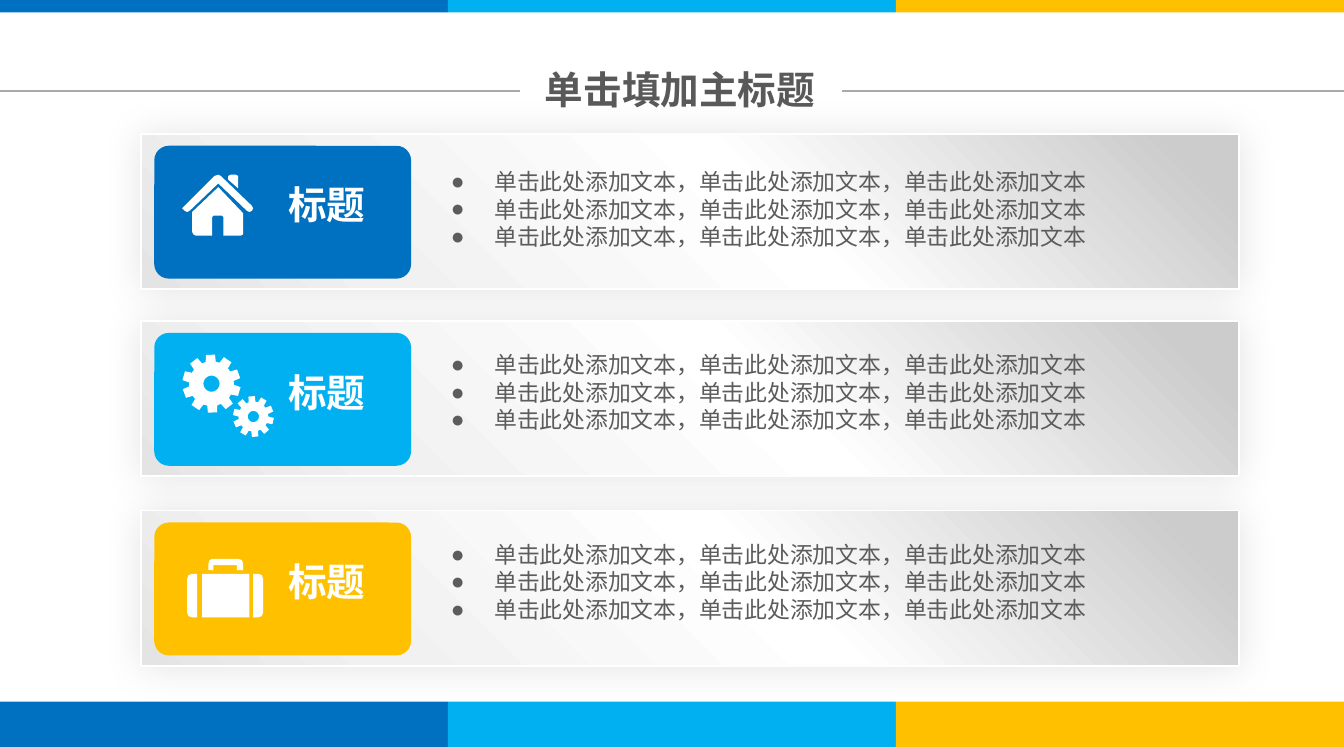
from math import cos, radians, sin

from lxml.etree import SubElement
from pptx import Presentation
from pptx.dml.color import RGBColor
from pptx.enum.shapes import MSO_CONNECTOR, MSO_SHAPE
from pptx.enum.text import MSO_AUTO_SIZE, PP_ALIGN
from pptx.oxml.ns import qn
from pptx.util import Cm, Pt

BLUE, SKY, AMBER, WHITE = "0070C0", "00B0F0", "FFC000", "FFFFFF"
TITLE_GRAY, TEXT_GRAY, LINE_GRAY = "5A5959", "5C5C5C", "A9A9A9"
PANEL_STOPS = [(6, "CCCCCC"), (43, "FFFFFF"), (80, "F1F1F1"), (100, "E4E4E4")]
CJK_FONT = "Noto Sans CJK SC"
LINE_TEXT = "，".join(["单击此处添加文本"] * 3)
ICON_UNIT = Cm(0.025)

HOUSE = [
    [(45, 1), (43, 0), (39, 0), (37, 1), (37, 4), (45, 11)],
    [(56, 25), (31, 1), (29, 0), (26, 1), (2, 25), (0, 27), (2, 29), (4, 30),
     (6, 29), (29, 7), (52, 29), (54, 30), (56, 29), (57, 27)],
    [(8, 30), (8, 46), (9, 48), (11, 49), (24, 49), (24, 34), (25, 33),
     (32, 33), (33, 34), (33, 49), (47, 49), (49, 48), (49, 31), (29, 10)],
]
CASE_SIDE = [(0, 16), (0, 43), (1, 46), (4, 47), (8, 47), (8, 12), (4, 12), (1, 13)]
CASE = [
    [(21, 5), (40, 5), (40, 9), (45, 9), (45, 4), (44, 1), (41, 0), (20, 0),
     (18, 1), (17, 4), (17, 9), (21, 9)],
    CASE_SIDE,
    [(12, 12), (50, 12), (50, 47), (12, 47)],
    [(61 - x, y) for x, y in CASE_SIDE],
]


def color(value):
    return RGBColor.from_string(value)


def polar(radius, angle):
    return radius * cos(radians(angle)), radius * sin(radians(angle))


def gear(tip, root, hole, turn):
    """Contours of a ten-tooth gear with a round hole, centred on (0, 0)."""
    rim = []
    for tooth in range(10):
        middle = turn + 36 * tooth
        rim += [polar(root, middle - 13), polar(tip, middle - 9),
                polar(tip, middle + 9), polar(root, middle + 13)]
    return [rim, [polar(hole, angle) for angle in range(0, 360, 15)]]


def add_block(shapes, kind, left, top, width, height, fill=None):
    block = shapes.add_shape(kind, Cm(left), Cm(top), Cm(width), Cm(height))
    block.shadow.inherit = False
    block.line.fill.background()
    if fill:
        block.fill.solid()
        block.fill.fore_color.rgb = color(fill)
    return block


def add_icon(shapes, left, top, contours):
    """Draw contours, in icon units, around the given origin."""
    fine = [[(x * 100, y * 100) for x, y in contour] for contour in contours]
    builder = shapes.build_freeform(*fine[0][0], scale=ICON_UNIT / 100)
    builder.add_line_segments(fine[0][1:])
    for contour in fine[1:]:
        builder.move_to(*contour[0])
        builder.add_line_segments(contour[1:])
    icon = builder.convert_to_shape(Cm(left), Cm(top))
    icon.shadow.inherit = False
    icon.fill.solid()
    icon.fill.fore_color.rgb = color(WHITE)
    icon.line.fill.background()


def add_color_value(parent, value):
    return SubElement(parent, qn("a:srgbClr"), val=value)


def add_panel(page, top):
    panel = add_block(page.shapes, MSO_SHAPE.ROUNDED_RECTANGLE, 2.84, top, 22.05, 3.12)
    panel.adjustments[0] = 0
    panel.fill.gradient()
    panel.fill.gradient_angle = 225
    properties = panel.element.spPr
    stops = properties.find(".//" + qn("a:gsLst"))
    for stop in list(stops):
        stops.remove(stop)
    for position, value in PANEL_STOPS:
        add_color_value(SubElement(stops, qn("a:gs"), pos=str(position * 1000)), value)
    panel.line.fill.solid()
    panel.line.fill.fore_color.rgb = color(WHITE)
    panel.line.width = Pt(1)
    shadow = SubElement(properties.find(qn("a:effectLst")), qn("a:outerShdw"),
                        blurRad=str(Pt(22)), dist="0", dir="0", algn="ctr", rotWithShape="0")
    SubElement(add_color_value(shadow, "000000"), qn("a:alpha"), val="11000")


def add_text(shapes, left, top, width, height, lines, size, value, font,
             bold=False, bullets=False):
    box = shapes.add_textbox(Cm(left), Cm(top), Cm(width), Cm(height))
    frame = box.text_frame
    frame.word_wrap = True
    frame.auto_size = MSO_AUTO_SIZE.SHAPE_TO_FIT_TEXT
    for index, line in enumerate(lines):
        para = frame.paragraphs[0] if index == 0 else frame.add_paragraph()
        if bullets:
            add_bullet(para)
        else:
            para.alignment = PP_ALIGN.CENTER
        span = para.add_run()
        span.text = line
        span.font.size = Pt(size)
        span.font.bold = bold
        span.font.color.rgb = color(value)
        span.font.name = font
        SubElement(span.font._element, qn("a:ea"), typeface=font)


def add_bullet(para):
    settings = para._p.get_or_add_pPr()
    settings.set("marL", str(Cm(0.87)))
    settings.set("indent", str(-Cm(0.87)))
    SubElement(settings, qn("a:buFont"), typeface="Arial")
    SubElement(settings, qn("a:buChar"), char="●")


def add_row(page, top, text_top, fill, icons):
    add_panel(page, top)
    tile = page.shapes.add_group_shape().shapes
    card = add_block(tile, MSO_SHAPE.ROUNDED_RECTANGLE, 3.1, top + 0.24, 5.16, 2.67, fill)
    card.adjustments[0] = 0.11
    for left, icon_top, contours in icons:
        add_icon(tile, left, icon_top, contours)
    add_text(tile, 5.03, top + 0.83, 3.07, 1.4, ["标题"], 22, WHITE, CJK_FONT, bold=True)
    add_text(page.shapes, 8.81, text_top, 14.45, 2.29, [LINE_TEXT] * 3, 13, TEXT_GRAY,
             CJK_FONT, bullets=True)


def add_band(page, top, height):
    band = page.shapes.add_group_shape().shapes
    for index, fill in enumerate([BLUE, SKY, AMBER]):
        add_block(band, MSO_SHAPE.RECTANGLE, 9 * index, top, 9, height, fill)


def add_rule(page, start, end):
    rule = page.shapes.add_connector(MSO_CONNECTOR.STRAIGHT, Cm(start), Cm(1.83),
                                     Cm(end), Cm(1.83))
    rule.line.color.rgb = color(LINE_GRAY)
    rule.line.width = Pt(1)
    SubElement(rule._element.spPr, qn("a:effectLst"))


def main():
    deck = Presentation()
    deck.slide_width, deck.slide_height = Cm(27), Cm(15.01)
    page = deck.slides.add_slide(deck.slide_layouts[6])

    gears = [(4.25, 7.71, gear(23.5, 18, 6.5, -20)),
             (5.09, 8.37, gear(16.5, 12, 4.5, 13))]
    add_row(page, 2.69, 3.25, BLUE, [(3.66, 3.51, HOUSE)])
    add_row(page, 6.45, 6.93, SKY, gears)
    add_row(page, 10.26, 10.74, AMBER, [(3.76, 11.23, CASE)])

    add_band(page, 0, 0.25)
    add_band(page, 14.1, 0.94)
    add_text(page.shapes, 9.53, 1.19, 8.26, 1.19, ["单击填加主标题"], 22, TITLE_GRAY,
             "Arial", bold=True)
    add_rule(page, 0, 10.44)
    add_rule(page, 16.92, 27)
    deck.save("out.pptx")


if __name__ == "__main__":
    main()
